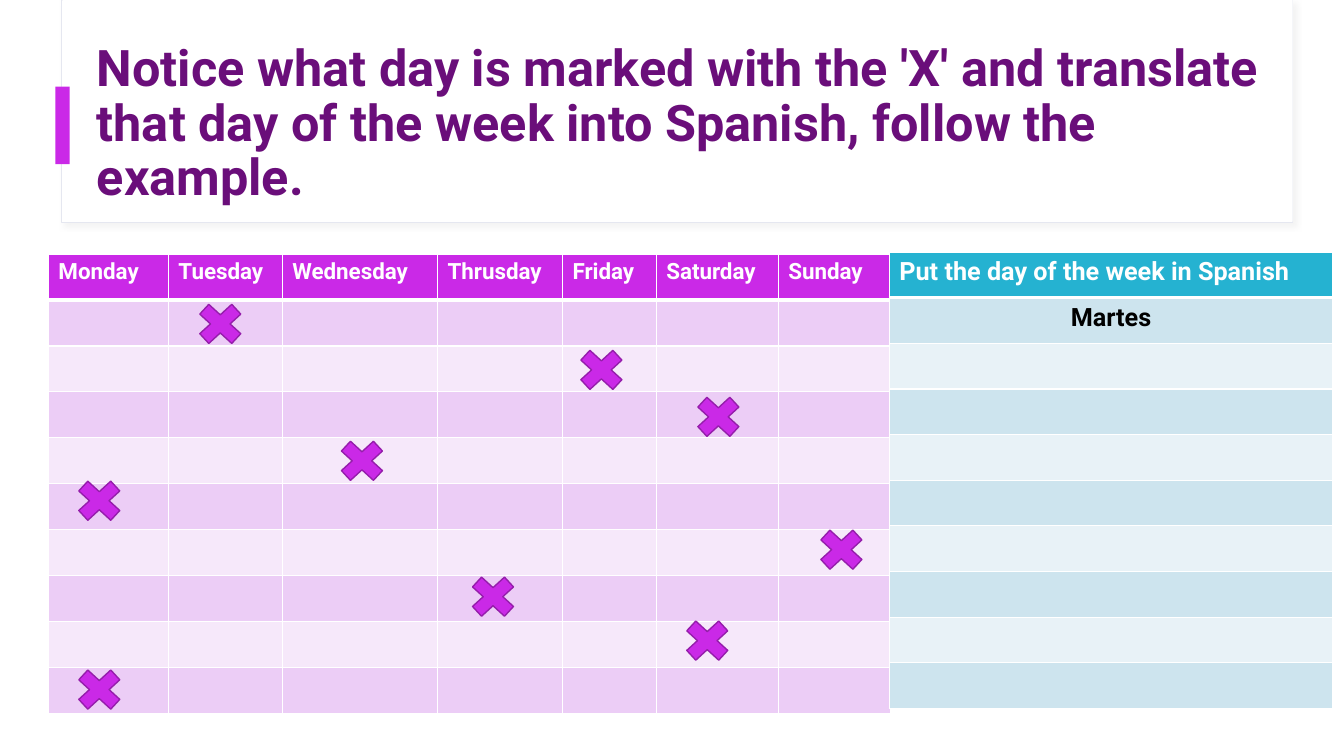
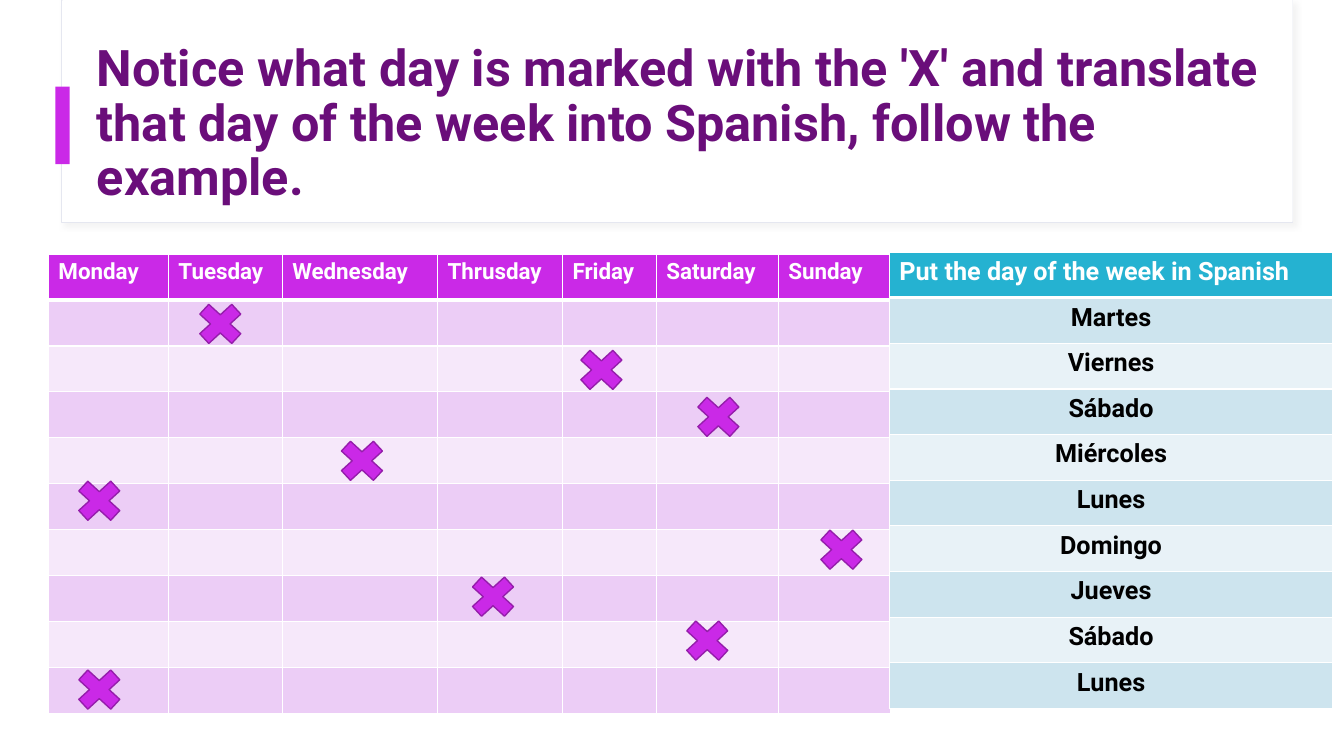
from itertools import accumulate

from lxml.etree import SubElement
from pptx import Presentation
from pptx.dml.color import RGBColor
from pptx.enum.shapes import MSO_SHAPE
from pptx.enum.text import MSO_ANCHOR, MSO_AUTO_SIZE, PP_ALIGN
from pptx.oxml import parse_xml
from pptx.oxml.ns import nsdecls, qn
from pptx.util import Inches, Pt

TITLE = ("Notice what day is marked with the 'X' and translate that day of the week "
         "into Spanish, follow the example.")
ANSWER_HEADING = "Put the day of the week in Spanish"
DAY_WIDTHS = {"Monday": 1.19, "Tuesday": 1.13, "Wednesday": 1.54, "Thrusday": 1.24,
              "Friday": 0.93, "Saturday": 1.21, "Sunday": 1.11}
# Marked day, Spanish answer, offset of the mark from its cell centre (inches)
EXERCISES = [
    ("Tuesday", "Martes", -0.05, 0.01),
    ("Friday", "Viernes", -0.08, 0.01),
    ("Saturday", "Sábado", 0.01, 0.02),
    ("Wednesday", "Miércoles", 0.02, 0),
    ("Monday", "Lunes", -0.09, -0.06),
    ("Sunday", "Domingo", 0.07, -0.03),
    ("Thrusday", "Jueves", -0.07, -0.02),
    ("Saturday", "Sábado", -0.1, -0.04),
    ("Monday", "Lunes", -0.09, -0.01),
]
ANSWERS_SHOWN = [1, len(EXERCISES)]  # one entry per slide

FONT = "Roboto"
WHITE = RGBColor(0xFF, 0xFF, 0xFF)
BLACK = RGBColor(0, 0, 0)
MAGENTA = RGBColor(0xCA, 0x29, 0xE7)
MARK_EDGE = RGBColor(0x95, 0x1E, 0xAB)
TITLE_PURPLE = RGBColor(0x6A, 0x0E, 0x7A)
FRAME_EDGE = RGBColor(0xE5, 0xE7, 0xF0)
SHADOW_GREY = RGBColor(0xD9, 0xD9, 0xD9)
TEAL = RGBColor(0x25, 0xB2, 0xD1)
PINK_BANDS = (RGBColor(0xEC, 0xCD, 0xF6), RGBColor(0xF6, 0xE8, 0xFA))
BLUE_BANDS = (RGBColor(0xCD, 0xE4, 0xEE), RGBColor(0xE8, 0xF2, 0xF7))

ROWS = len(EXERCISES) + 1
CALENDAR_LEFT, CALENDAR_TOP, CALENDAR_HEIGHT = 0.48, 2.52, 4.56
ANSWER_LEFT, ANSWER_TOP, ANSWER_WIDTH, ANSWER_HEIGHT = 8.82, 2.5, 4.4, 4.53
MARK_WIDTH, MARK_HEIGHT = 0.61, 0.56


def add_block(slide, preset, box, fill, edge=None, edge_width=1):
    block = slide.shapes.add_shape(preset, *map(Inches, box))
    block.shadow.inherit = False
    block.fill.solid()
    block.fill.fore_color.rgb = fill
    if edge is None:
        block.line.fill.background()
    else:
        block.line.color.rgb = edge
        block.line.width = Pt(edge_width)
    return block


def add_soft_shadow(block):
    properties = block.element.spPr
    properties.remove(properties.find(qn("a:effectLst")))
    properties.append(parse_xml(
        f'<a:effectLst {nsdecls("a")}><a:outerShdw blurRad="{Pt(4)}" dist="{Pt(3)}" '
        f'dir="2700000" algn="tl" rotWithShape="0"><a:srgbClr val="{SHADOW_GREY}">'
        '<a:alpha val="30000"/></a:srgbClr></a:outerShdw></a:effectLst>'))


def prepare_layout(layout, slide):
    """Set the title's place and move the header frame from slide to layout."""
    for placeholder in list(layout.placeholders):
        if placeholder.placeholder_format.idx:
            placeholder.element.getparent().remove(placeholder.element)
    title = layout.placeholders[0]
    title.left, title.top, title.width, title.height = map(Inches, (0.86, 0.6, 12.04, 1.28))

    outline = add_block(slide, MSO_SHAPE.RECTANGLE, (0.61, 0, 12.21, 2.21),
                        WHITE, FRAME_EDGE, 0.75)
    add_soft_shadow(outline)
    panel = add_block(slide, MSO_SHAPE.RECTANGLE, (0.62, 0, 12.2, 2.2), WHITE)
    accent = add_block(slide, MSO_SHAPE.RECTANGLE, (0.55, 0.86, 0.14, 0.77), MAGENTA)
    for position, block in enumerate((outline, panel, accent), start=2):
        layout.shapes.element.insert(position, block.element)


def style_paragraph(paragraph, size, colour, align=PP_ALIGN.LEFT):
    paragraph.alignment = align
    paragraph.font.name = FONT
    paragraph.font.size = Pt(size)
    paragraph.font.bold = True
    paragraph.font.color.rgb = colour


def add_title(slide):
    frame = slide.shapes.title.text_frame
    frame.text = TITLE
    frame.word_wrap = True
    frame.auto_size = MSO_AUTO_SIZE.NONE
    frame.vertical_anchor = MSO_ANCHOR.MIDDLE
    paragraph = frame.paragraphs[0]
    paragraph.line_spacing = 0.9
    style_paragraph(paragraph, 36, TITLE_PURPLE)


def set_borders(cell, row):
    widths = {"L": 1, "R": 1, "T": 3 if row == 1 else 1, "B": 3 if row == 0 else 1}
    properties = cell._tc.get_or_add_tcPr()
    for side, width in widths.items():
        edge = SubElement(properties, qn(f"a:ln{side}"), w=str(Pt(width)))
        fill = SubElement(edge, qn("a:solidFill"))
        SubElement(fill, qn("a:srgbClr"), val=str(WHITE))


def add_banded_table(slide, place, widths, height, headings, size, heading_fill, bands):
    left, top = place
    table = slide.shapes.add_table(ROWS, len(widths), Inches(left), Inches(top),
                                   Inches(sum(widths)), Inches(height)).table
    for column, width in zip(table.columns, widths):
        column.width = Inches(width)
    for number, row in enumerate(table.rows):
        row.height = Inches(height / ROWS)
        for cell in row.cells:
            set_borders(cell, number)
            cell.fill.solid()
            cell.fill.fore_color.rgb = bands[(number - 1) % 2] if number else heading_fill
    for cell, heading in zip(table.rows[0].cells, headings):
        cell.text = heading
        style_paragraph(cell.text_frame.paragraphs[0], size, WHITE)
    return table


def add_marks(slide):
    days, widths = list(DAY_WIDTHS), list(DAY_WIDTHS.values())
    lefts = list(accumulate(widths, initial=CALENDAR_LEFT))
    row_height = CALENDAR_HEIGHT / ROWS
    for row, (day, _, shift_x, shift_y) in enumerate(EXERCISES, start=1):
        column = days.index(day)
        centre_x = lefts[column] + widths[column] / 2 + shift_x
        centre_y = CALENDAR_TOP + (row + 0.5) * row_height + shift_y
        add_block(slide, MSO_SHAPE.MATH_MULTIPLY,
                  (centre_x - MARK_WIDTH / 2, centre_y - MARK_HEIGHT / 2,
                   MARK_WIDTH, MARK_HEIGHT), MAGENTA, MARK_EDGE)


def add_answers(slide, shown):
    table = add_banded_table(slide, (ANSWER_LEFT, ANSWER_TOP), [ANSWER_WIDTH], ANSWER_HEIGHT,
                             [ANSWER_HEADING], 18, TEAL, BLUE_BANDS)
    for row, (_, spanish, *_) in enumerate(EXERCISES[:shown], start=1):
        cell = table.cell(row, 0)
        cell.text = spanish
        style_paragraph(cell.text_frame.paragraphs[0], 18, BLACK, PP_ALIGN.CENTER)


def main():
    deck = Presentation()
    deck.slide_width, deck.slide_height = Inches(13.33), Inches(7.5)
    layout = deck.slide_layouts.get_by_name("Title Only")
    slides = [deck.slides.add_slide(layout) for _ in ANSWERS_SHOWN]
    prepare_layout(layout, slides[0])
    for slide, shown in zip(slides, ANSWERS_SHOWN):
        add_title(slide)
        add_banded_table(slide, (CALENDAR_LEFT, CALENDAR_TOP), list(DAY_WIDTHS.values()),
                         CALENDAR_HEIGHT, DAY_WIDTHS, 16, MAGENTA, PINK_BANDS)
        add_marks(slide)
        add_answers(slide, shown)
    deck.save("out.pptx")


if __name__ == "__main__":
    main()
